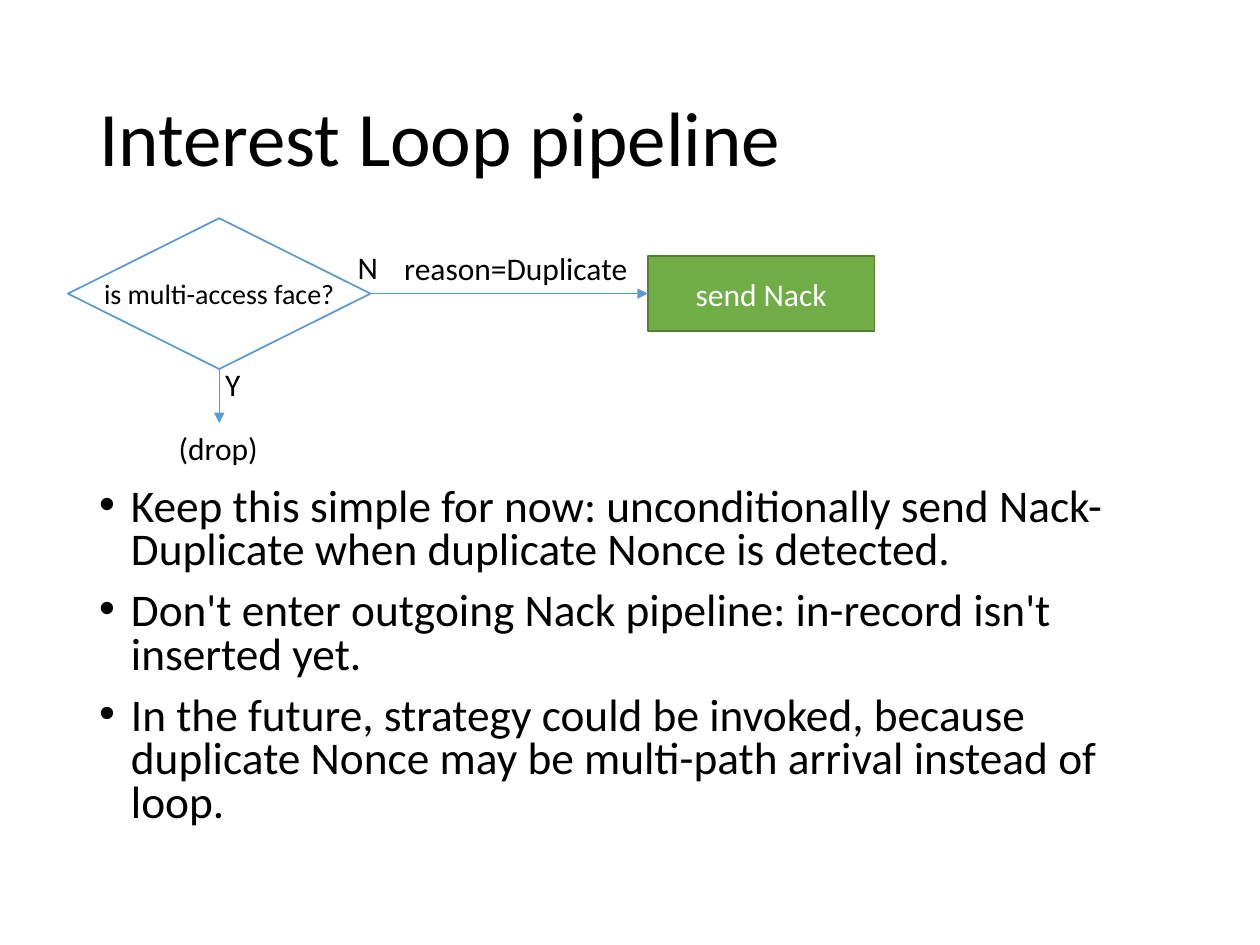
from dataclasses import dataclass

from lxml.etree import SubElement
from pptx import Presentation
from pptx.dml.color import RGBColor
from pptx.enum.shapes import MSO_CONNECTOR, MSO_SHAPE
from pptx.enum.text import MSO_ANCHOR, MSO_AUTO_SIZE, PP_ALIGN
from pptx.oxml.ns import qn
from pptx.shapes.autoshape import Shape
from pptx.shapes.base import BaseShape
from pptx.slide import Slide
from pptx.util import Cm, Pt


@dataclass(frozen=True)
class Theme:
    font: str = "Calibri"
    ink: str = "000000"
    paper: str = "FFFFFF"
    blue: str = "5B9BD5"
    green: str = "70AD47"
    edge: str = "538035"
    title: float = 44
    body: float = 25.9
    label: float = 18
    small: float = 16
    border: float = 1
    arrow: float = 0.5


@dataclass(frozen=True)
class Box:
    """Place in centimetres."""
    left: float
    top: float
    width: float
    height: float

    def cm(self) -> list[Cm]:
        return [Cm(n) for n in (self.left, self.top, self.width, self.height)]


@dataclass(frozen=True)
class Node:
    text: str
    box: Box
    kind: MSO_SHAPE
    fill: str
    line: str
    color: str
    size: float
    wrap: bool


@dataclass(frozen=True)
class Label:
    text: str
    box: Box


THEME = Theme()
TITLE = Label("Interest Loop pipeline", Box(1.75, 1.02, 21.9, 3.68))
BODY = Box(1.75, 9.7, 21.9, 7.47)
POINTS = (
    "Keep this simple for now: unconditionally send Nack-Duplicate when duplicate Nonce is detected.",
    "Don't enter outgoing Nack pipeline: in-record isn't inserted yet.",
    "In the future, strategy could be invoked, because duplicate Nonce may be multi-path arrival instead of loop.",
)
CHECK = Node("is multi-access face?", Box(1.37, 4.4, 6.1, 3.04),
             MSO_SHAPE.FLOWCHART_DECISION, THEME.paper, THEME.blue,
             THEME.ink, THEME.small, False)
NACK = Node("send Nack", Box(13.06, 5.16, 4.57, 1.52), MSO_SHAPE.RECTANGLE,
            THEME.green, THEME.edge, THEME.paper, THEME.label, True)
DROP = Label("(drop)", Box(3.35, 8.53, 2.14, 1.02))
MARKS = (
    Label("reason=Duplicate", Box(7.9, 4.9, 5.05, 1.02)),
    Label("N", Box(6.96, 4.88, 0.91, 1.02)),
    Label("Y", Box(4.29, 7.24, 0.81, 1.02)),
)


def apply(item: object, **form: object) -> None:
    for name, value in form.items():
        setattr(item, name, value)


def write(shape: Shape, lines: tuple[str, ...], size: float, color: str,
          frame: dict, para: dict) -> None:
    text = shape.text_frame
    apply(text, **frame)
    for i, line in enumerate(lines):
        item = text.add_paragraph() if i else text.paragraphs[0]
        apply(item, **para)
        run = item.add_run()
        run.text = line
        apply(run.font, name=THEME.font, size=Pt(size))
        run.font.color.rgb = RGBColor.from_string(color)


def add_title(slide: Slide) -> None:
    shape = slide.shapes.add_textbox(*TITLE.box.cm())
    write(shape, (TITLE.text,), THEME.title, THEME.ink,
          {"word_wrap": True, "vertical_anchor": MSO_ANCHOR.MIDDLE},
          {"line_spacing": 0.9})


def add_points(slide: Slide) -> None:
    shape = slide.shapes.add_textbox(*BODY.cm())
    write(shape, POINTS, THEME.body, THEME.ink, {"word_wrap": True},
          {"line_spacing": 0.8, "space_before": Pt(10)})
    hang = Cm(0.64)
    for para in shape.text_frame.paragraphs:
        prop = para._p.get_or_add_pPr()
        prop.set("marL", str(hang))
        prop.set("indent", str(-hang))
        SubElement(prop, qn("a:buFont"), typeface="Arial")
        SubElement(prop, qn("a:buChar"), char="•")


def add_node(slide: Slide, node: Node) -> Shape:
    shape = slide.shapes.add_shape(node.kind, *node.box.cm())
    shape.shadow.inherit = False
    shape.fill.solid()
    shape.fill.fore_color.rgb = RGBColor.from_string(node.fill)
    shape.line.color.rgb = RGBColor.from_string(node.line)
    shape.line.width = Pt(THEME.border)
    write(shape, (node.text,), node.size, node.color,
          {"word_wrap": node.wrap, "vertical_anchor": MSO_ANCHOR.MIDDLE},
          {"alignment": PP_ALIGN.CENTER})
    return shape


def add_label(slide: Slide, label: Label) -> Shape:
    shape = slide.shapes.add_textbox(*label.box.cm())
    write(shape, (label.text,), THEME.label, THEME.ink,
          {"word_wrap": False, "auto_size": MSO_AUTO_SIZE.SHAPE_TO_FIT_TEXT},
          {"alignment": PP_ALIGN.LEFT})
    return shape


def add_arrow(slide: Slide, start: BaseShape, out: int,
              end: BaseShape, into: int) -> None:
    """Join side `out` of start to side `into` of end."""
    arrow = slide.shapes.add_connector(MSO_CONNECTOR.STRAIGHT, 0, 0, 0, 0)
    arrow.begin_connect(start, out)
    arrow.end_connect(end, into)
    arrow.line.color.rgb = RGBColor.from_string(THEME.blue)
    arrow.line.width = Pt(THEME.arrow)
    SubElement(arrow.line._get_or_add_ln(), qn("a:tailEnd"), type="triangle")
    SubElement(arrow._element.spPr, qn("a:effectLst"))


def main() -> None:
    deck = Presentation()
    apply(deck, slide_width=Cm(25.4), slide_height=Cm(19.05))
    slide = deck.slides.add_slide(deck.slide_layouts[6])
    add_title(slide)
    add_points(slide)
    check = add_node(slide, CHECK)
    nack = add_node(slide, NACK)
    drop = add_label(slide, DROP)
    add_arrow(slide, check, 3, nack, 1)
    add_arrow(slide, check, 2, drop, 0)
    for mark in MARKS:
        add_label(slide, mark)
    deck.save("out.pptx")


if __name__ == "__main__":
    main()
